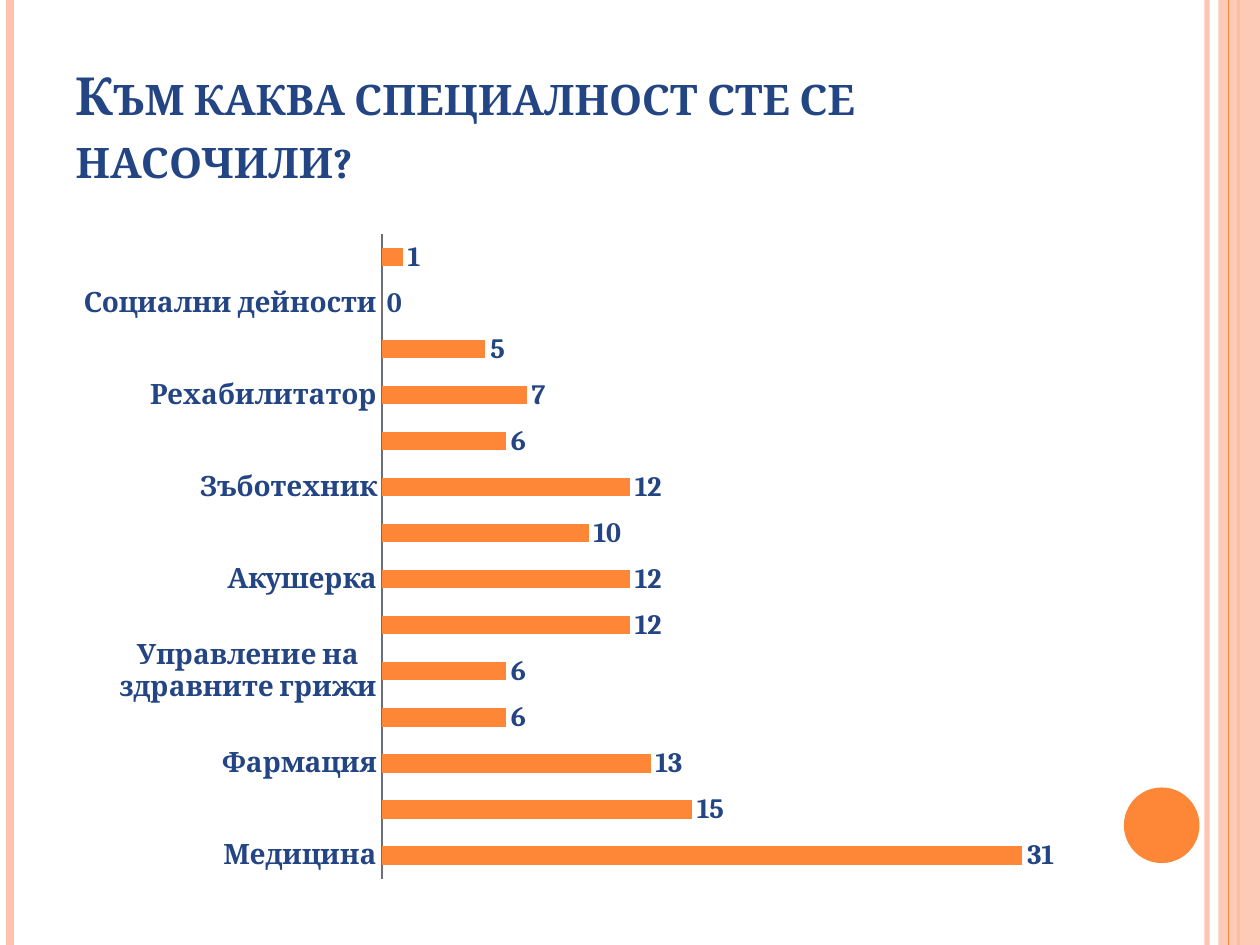
from lxml import etree
from pptx import Presentation
from pptx.chart.data import CategoryChartData
from pptx.dml.color import RGBColor
from pptx.enum.chart import XL_CHART_TYPE, XL_LABEL_POSITION, XL_TICK_LABEL_POSITION, XL_TICK_MARK
from pptx.enum.shapes import MSO_CONNECTOR, MSO_SHAPE
from pptx.enum.text import MSO_ANCHOR, PP_ALIGN
from pptx.oxml.ns import qn
from pptx.util import Inches, Pt

BAR = XL_CHART_TYPE.BAR_CLUSTERED
OUTSIDE_END = XL_LABEL_POSITION.OUTSIDE_END
NEXT_TO_AXIS = XL_TICK_LABEL_POSITION.NEXT_TO_AXIS
NO_TICK = XL_TICK_MARK.NONE
STRAIGHT = MSO_CONNECTOR.STRAIGHT
RECTANGLE, OVAL = MSO_SHAPE.RECTANGLE, MSO_SHAPE.OVAL
BOTTOM, LEFT = MSO_ANCHOR.BOTTOM, PP_ALIGN.LEFT

ORANGE = RGBColor(0xFE, 0x86, 0x37)
PEACH = RGBColor(0xFE, 0xC3, 0xAE)
NAVY = RGBColor(0x24, 0x45, 0x83)
GREY = RGBColor(0x6B, 0x6F, 0x76)
BLACK = RGBColor(0, 0, 0)

# Every second bar carries a name
SPECIALTIES = [
    "Медицина",
    "Фармация",
    "Управление на здравните грижи",
    "Акушерка",
    "Зъботехник",
    "Рехабилитатор",
    "Социални дейности",
]
ANSWERS = [31, 15, 13, 6, 6, 12, 12, 10, 12, 6, 7, 5, 0, 1]


class SurveySlide:
    """Slide on a 10 by 7.5 grid of one-inch columns and rows."""
    COLUMNS, ROWS = 10, 7.5
    FONT = "Cambria"

    def __init__(self):
        self.deck = Presentation()
        self.deck.slide_width = Inches(self.COLUMNS)
        self.deck.slide_height = Inches(self.ROWS)
        self.slide = self.deck.slides.add_slide(self.deck.slide_layouts[5])

    def style(self, font, size, color=NAVY, bold=True):
        font.name, font.size, font.bold = self.FONT, Pt(size), bold
        font.color.rgb = color

    def fade(self, element, percent):
        color = next(element.iter(qn("a:srgbClr")))
        etree.SubElement(color, qn("a:alpha"), val=str(percent * 1000))

    def stripe(self, column, width, color, opacity=100):
        x = Inches(column)
        line = self.slide.shapes.add_connector(STRAIGHT, x, 0, x, Inches(self.ROWS))
        line.line.color.rgb = color
        line.line.width = Pt(width)
        properties = line._element.spPr
        if opacity < 100:
            self.fade(properties, opacity)
        etree.SubElement(properties, qn("a:effectLst"))

    def block(self, kind, box, color, opacity=100):
        shape = self.slide.shapes.add_shape(kind, *map(Inches, box))
        shape.shadow.inherit = False
        shape.fill.solid()
        shape.fill.fore_color.rgb = color
        shape.line.fill.background()
        if opacity < 100:
            self.fade(shape._element.spPr, opacity)

    def title(self, text, box, size):
        holder = self.slide.shapes.title
        holder.left, holder.top, holder.width, holder.height = map(Inches, box)
        frame = holder.text_frame
        frame.word_wrap = True
        frame.vertical_anchor = BOTTOM
        paragraph = frame.paragraphs[0]
        paragraph.alignment = LEFT
        run = paragraph.add_run()
        run.text = text
        self.style(run.font, size)
        run.font._element.set("cap", "small")

    def bar_chart(self, names, values, box, plot, maximum):
        data = CategoryChartData()
        data.categories = [label for name in names for label in (name, "")]
        data.add_series("Series 1", values)
        chart = self.slide.shapes.add_chart(BAR, *map(Inches, box), data).chart
        chart.has_legend = chart.has_title = False
        self.style(chart.font, 10, BLACK, False)

        # Axes
        categories, scale = chart.category_axis, chart.value_axis
        categories.major_tick_mark = categories.minor_tick_mark = NO_TICK
        categories.tick_label_position = NEXT_TO_AXIS
        categories.format.line.color.rgb = GREY
        self.style(categories.tick_labels.font, 16)
        scale.minimum_scale, scale.maximum_scale = 0, maximum
        scale.has_major_gridlines = False
        scale.visible = False

        # Bars and their values
        bars = chart.plots[0]
        bars.gap_width = 150
        bars.vary_by_categories = False
        series = bars.series[0]
        series.format.fill.solid()
        series.format.fill.fore_color.rgb = ORANGE
        labels = series.data_labels
        labels.show_value = True
        labels.position = OUTSIDE_END
        self.style(labels.font, 16)

        # Inner plot area, as shares of the chart
        area = chart._chartSpace.chart.plotArea
        for old in area.findall(qn("c:layout")):
            area.remove(old)
        layout = etree.Element(qn("c:layout"))
        manual = etree.SubElement(layout, qn("c:manualLayout"))
        settings = {"layoutTarget": "inner", "xMode": "edge", "yMode": "edge"}
        settings.update(zip("xywh", map(str, plot)))
        for name, value in settings.items():
            etree.SubElement(manual, qn(f"c:{name}"), val=value)
        area.insert(0, layout)


def main():
    survey = SurveySlide()

    # Side stripes and disc
    survey.stripe(9.58, 3, PEACH, 93)
    survey.stripe(0.08, 4.5, PEACH)
    survey.stripe(9.83, 1.5, ORANGE)
    survey.block(RECTANGLE, (9.67, 0, 0.33, survey.ROWS), PEACH, 87)
    survey.stripe(9.75, 0.75, ORANGE)
    survey.block(OVAL, (8.92, 6.25, 0.6, 0.6), ORANGE)

    # Question and answers
    survey.title("Към каква специалност сте се насочили?", (0.5, 0.3, 8.17, 1.25), 30)
    survey.bar_chart(SPECIALTIES, ANSWERS, (0.5, 1.75, 8.44, 5.33),
                     (0.3, 0.02, 0.68, 0.96), 35)

    survey.deck.save("out.pptx")


if __name__ == "__main__":
    main()
